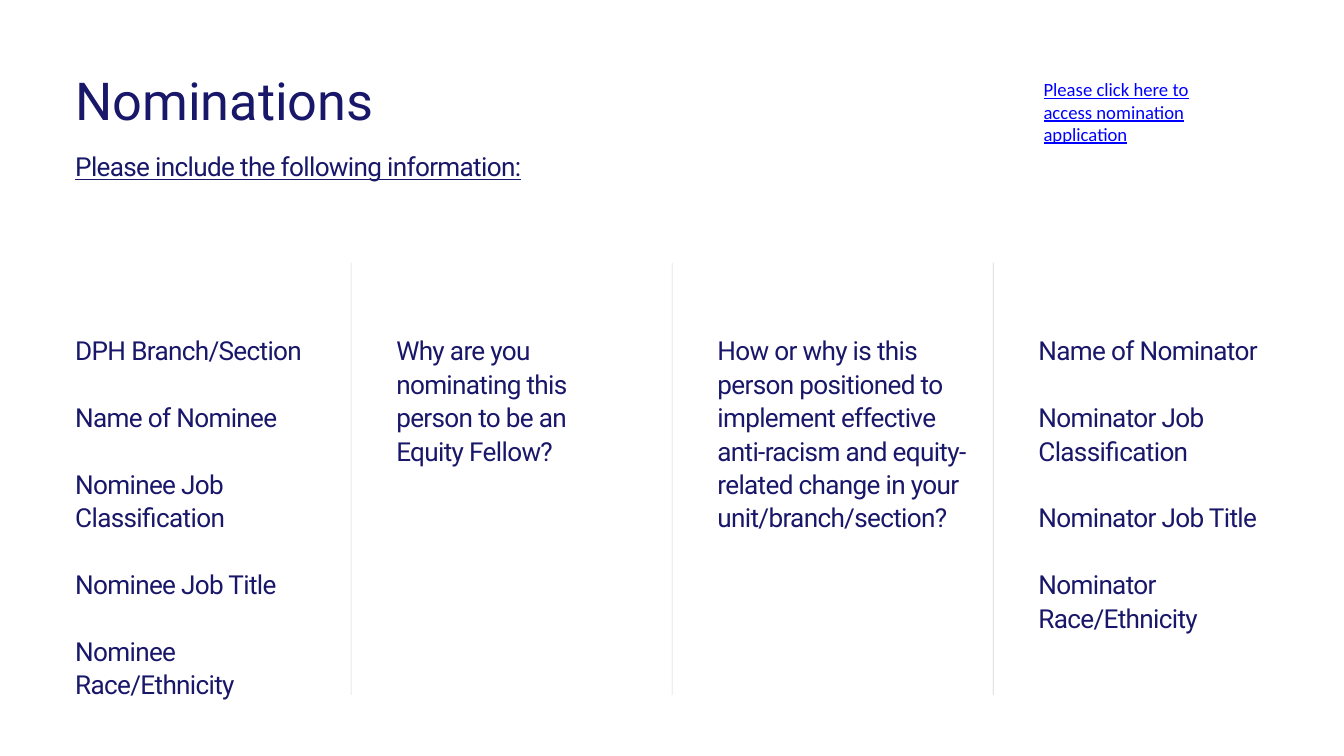
from lxml import etree
from pptx import Presentation
from pptx.dml.color import RGBColor
from pptx.enum.shapes import MSO_SHAPE
from pptx.enum.text import MSO_ANCHOR, MSO_AUTO_SIZE, PP_ALIGN
from pptx.oxml.ns import qn
from pptx.util import Pt

RECTANGLE = MSO_SHAPE.RECTANGLE
TOP, LEFT, NO_AUTOFIT = MSO_ANCHOR.TOP, PP_ALIGN.LEFT, MSO_AUTO_SIZE.NONE

NAVY = RGBColor(0x19, 0x17, 0x69)
DIVIDER = RGBColor(0x29, 0x28, 0x5D)
LINK_BLUE = RGBColor(0x00, 0x00, 0xFF)

MARGIN = 80.64
COLUMN_PITCH = 344
COLUMN_TOP = 356.4
LINE_PITCH = 35.8

# Width, height and entries of each column
COLUMNS = [
    (247, 390, ["DPH Branch/Section", "Name of Nominee", "Nominee Job Classification",
                "Nominee Job Title", "Nominee Race/Ethnicity"]),
    (247, 141, ["Why are you nominating this person to be an Equity Fellow?"]),
    (273, 254, ["How or why is this person positioned to implement effective "
                "anti-racism and equity-related change in your unit/branch/section?"]),
    (247, 319, ["Name of Nominator", "Nominator Job Classification",
                "Nominator Job Title", "Nominator Race/Ethnicity"]),
]


def place(box, left, top, width, height, inset=0):
    box.left, box.top, box.width, box.height = Pt(left), Pt(top), Pt(width), Pt(height)
    frame = box.text_frame
    frame.word_wrap = True
    frame.auto_size = NO_AUTOFIT
    frame.vertical_anchor = TOP
    if not inset:
        frame.margin_left = frame.margin_right = 0
        frame.margin_top = frame.margin_bottom = 0
    return frame


def write(paragraph, text, size, line_pitch=None, tracking=0, font="Roboto", color=NAVY):
    """Fill a paragraph; line_pitch is in points, tracking in hundredths of a point."""
    run = paragraph.add_run()
    run.text = text
    paragraph.alignment = LEFT
    if line_pitch:
        paragraph.line_spacing = Pt(line_pitch)
    paragraph.font.name = font
    paragraph.font.size = Pt(size)
    paragraph.font.color.rgb = color
    if tracking:
        run.font._element.set("spc", str(tracking))


prs = Presentation()
prs.slide_width, prs.slide_height = Pt(1440), Pt(810)
slide = prs.slides.add_slide(prs.slide_layouts[5])
shapes = slide.shapes

# Heading
title = place(shapes.title, MARGIN, 85, 835, 60)
write(title.paragraphs[0], "Nominations", 56, 55.4)

subtitle = place(shapes.add_textbox(0, 0, 0, 0), MARGIN, 164, 554, 32.4)
write(subtitle.paragraphs[0], "Please include the following information:", 28, 31.1, -70)
subtitle.paragraphs[0].font.underline = True

application = place(shapes.add_textbox(0, 0, 0, 0), 1111, 80, 216, 80, inset=True)
write(application.paragraphs[0], "Please click here to access nomination application", 20,
      font="Calibri", color=LINK_BLUE)
application.paragraphs[0].font.underline = True

# Columns, with a faint divider before each but the first
for index, (width, height, entries) in enumerate(COLUMNS):
    left = MARGIN + index * COLUMN_PITCH
    if index:
        divider = shapes.add_shape(RECTANGLE, Pt(left - 48.8), Pt(281.5), Pt(0.75), Pt(463))
        divider.shadow.inherit = False
        divider.line.fill.background()
        divider.fill.solid()
        divider.fill.fore_color.rgb = DIVIDER
        fill_color = divider.fill._xPr.find(".//" + qn("a:srgbClr"))
        etree.SubElement(fill_color, qn("a:alpha")).set("val", "20000")

    column = place(shapes.add_textbox(0, 0, 0, 0), left, COLUMN_TOP, width, height)
    for number, entry in enumerate(entries):
        paragraph = column.add_paragraph() if number else column.paragraphs[0]
        write(paragraph, entry, 28, LINE_PITCH, -70)
        if number:
            paragraph.space_before = Pt(LINE_PITCH)

prs.save("out.pptx")
